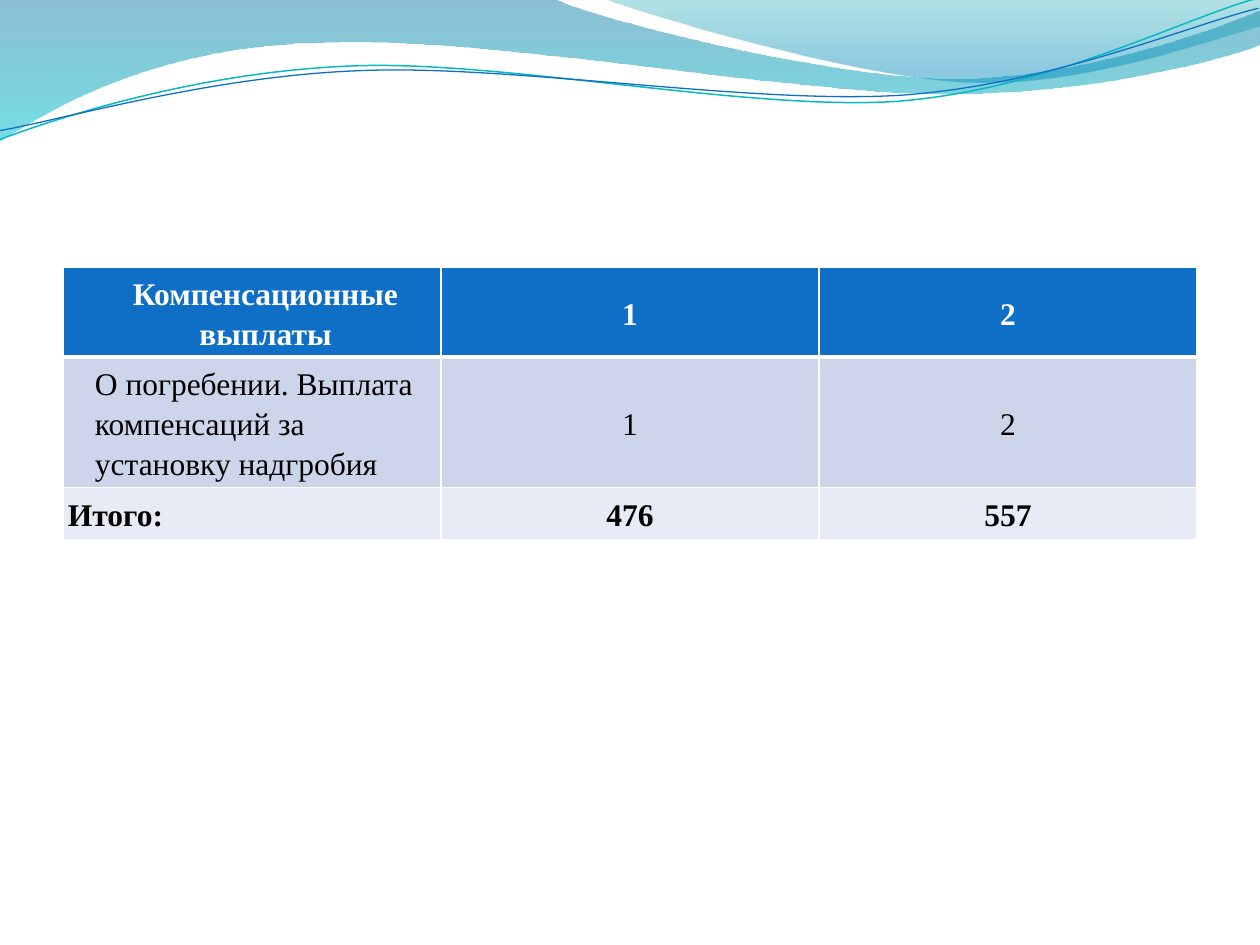
from lxml.etree import SubElement as Sub
from pptx import Presentation
from pptx.dml.color import RGBColor
from pptx.enum.text import MSO_ANCHOR as Anchor, PP_ALIGN as Align
from pptx.oxml.ns import qn
from pptx.util import Pt

SCALE = 914400 / 126

BACK = [(1, 1), (555, 0), (601, 22, 838, 80, 956, 80),
        (1076, 80, 1208, 34, 1261, 12), (1262, 46),
        (1240, 56, 1097, 97, 941, 95), (785, 95, 482, 36, 325, 44),
        (164, 46, 59, 106, 0, 143)]
FRONT = [(0, 0), (37, 15, 255, 79, 365, 83),
         (475, 88, 607, 41, 656, 27), (656, 1)]
TEAL = [(0, 82), (62, 62, 202, 24, 353, 25),
        (502, 25, 748, 89, 899, 86), (1052, 81, 1187, 17, 1263, 0)]
BLUE = [(0, 63), (60, 56, 210, 19, 360, 20),
        (512, 20, 753, 73, 905, 70), (1055, 66, 1192, 14, 1264, 0)]

WAVES = [(BACK, (-1, -1, 1262, 144), [(0, "0074A1", 45), (1, "00C6CF", 55)]),
         (FRONT, (604, -1, 656, 88), [(0, "00A1A9", 30), (0.8, "008BBF", 45)])]
LINES = [(TEAL, (-3, 28, 1263, 89), "0AB8BF", 0.85),
         (BLUE, (-3, 38, 1264, 73), "0F6FC6", 0.75)]

ROWS = [("Компенсационные выплаты", "1", "2"),
        ("О погребении. Выплата компенсаций за установку надгробия", "1", "2"),
        ("Итого:", "476", "557")]
STYLES = [{"fill": "0F6FC6", "ink": "FFFFFF", "bold": True,
           "left": 32, "align": Align.CENTER, "top": 1, "base": 3},
          {"fill": "CCD5EA", "ink": "000000", "bold": False,
           "left": 32, "align": Align.LEFT, "top": 3, "base": 1},
          {"fill": "E7EBF5", "ink": "000000", "bold": True,
           "left": 5, "align": Align.LEFT, "top": 1, "base": 1}]


def px(n):
    """Turn pixels into EMU."""
    return round(n * SCALE)


def paint(color, tone):
    """Give a colour format a hex tone."""
    color.rgb = RGBColor.from_string(tone)


def put(item, values):
    """Set each named attribute on an item."""
    for name, value in values.items():
        setattr(item, name, value)


def draw(slide, box, path, close):
    """Add an outline of corners and cubic curves that fills a box."""
    pen = slide.shapes.build_freeform(*path[0], scale=SCALE)
    pen.add_line_segments([part[-2:] for part in path[1:]], close=close)
    shape = pen.convert_to_shape()
    shape.shadow.inherit = False
    left, top, width, height = map(px, box)
    put(shape, {"left": left, "top": top, "width": width, "height": height})
    track = next(shape._element.iter(qn("a:path")))
    track.set("w", str(box[2]))
    track.set("h", str(box[3]))
    steps = [node for node in track if node.tag != qn("a:close")]
    for node, part in zip(steps, path):
        for spot in list(node):
            node.remove(spot)
        for x, y in zip(part[::2], part[1::2]):
            Sub(node, qn("a:pt"), x=str(x), y=str(y))
        if len(part) == 6:
            curve = track.makeelement(qn("a:cubicBezTo"))
            curve.extend(list(node))
            track.replace(node, curve)
    return shape


def shift(box, area):
    """Move an area by the corner of a box."""
    return (box[0] + area[0], box[1] + area[1], *area[2:])


def header(slide, box):
    """Place the waves and thin lines across the top."""
    for path, area, stops in WAVES:
        wave = draw(slide, shift(box, area), path, True)
        wave.line.fill.background()
        wave.fill.gradient()
        wave.fill.gradient_angle = 270
        for stop, (place, tone, alpha) in zip(wave.fill.gradient_stops, stops):
            stop.position = place
            paint(stop.color, tone)
        tones = wave._element.spPr.iter(qn("a:srgbClr"))
        for node, (place, tone, alpha) in zip(tones, stops):
            Sub(node, qn("a:alpha"), val=str(alpha * 1000))
    for path, area, tone, width in LINES:
        line = draw(slide, shift(box, area), path, False)
        line.rotation = 357.3
        line.fill.background()
        line.line.width = Pt(width)
        paint(line.line.color, tone)


def edge(cell, style):
    """Draw white borders on a cell."""
    props = cell._tc.get_or_add_tcPr()
    sides = {"L": 1, "R": 1, "T": style["top"], "B": style["base"]}
    for side, width in sides.items():
        line = Sub(props, qn("a:ln" + side), w=str(Pt(width)))
        fill = Sub(line, qn("a:solidFill"))
        Sub(fill, qn("a:srgbClr"), val="FFFFFF")


def write(cell, text, style, first):
    """Fill one cell with styled text."""
    edge(cell, style)
    cell.fill.solid()
    paint(cell.fill.fore_color, style["fill"])
    gap = px(5)
    put(cell, {"text": text, "vertical_anchor": Anchor.MIDDLE,
               "margin_left": px(style["left"]) if first else gap,
               "margin_right": gap, "margin_top": gap, "margin_bottom": gap})
    para = cell.text_frame.paragraphs[0]
    put(para, {"alignment": style["align"] if first else Align.CENTER,
               "line_spacing": 1.15})
    font = para.runs[0].font
    put(font, {"name": "Times New Roman", "size": Pt(18), "bold": style["bold"]})
    paint(font.color, style["ink"])


def payments(slide, box):
    """Place the payments table in its box."""
    count = len(ROWS[0])
    frame = slide.shapes.add_table(len(ROWS), count, *map(px, box))
    table = frame.table
    for col in table.columns:
        col.width = px(box[2] / count)
    for r, (texts, style) in enumerate(zip(ROWS, STYLES)):
        table.rows[r].height = px(52)
        for c, text in enumerate(texts):
            write(table.cell(r, c), text, style, c == 0)
    frame.height = px(box[3])


def main():
    """Build and save the slide."""
    deck = Presentation()
    put(deck, {"slide_width": px(1260), "slide_height": px(945)})
    slide = deck.slides.add_slide(deck.slide_layouts[6])
    header(slide, (0, 0, 1260, 142))
    payments(slide, (63, 267, 1134, 292))
    deck.save("out.pptx")


if __name__ == "__main__":
    main()
